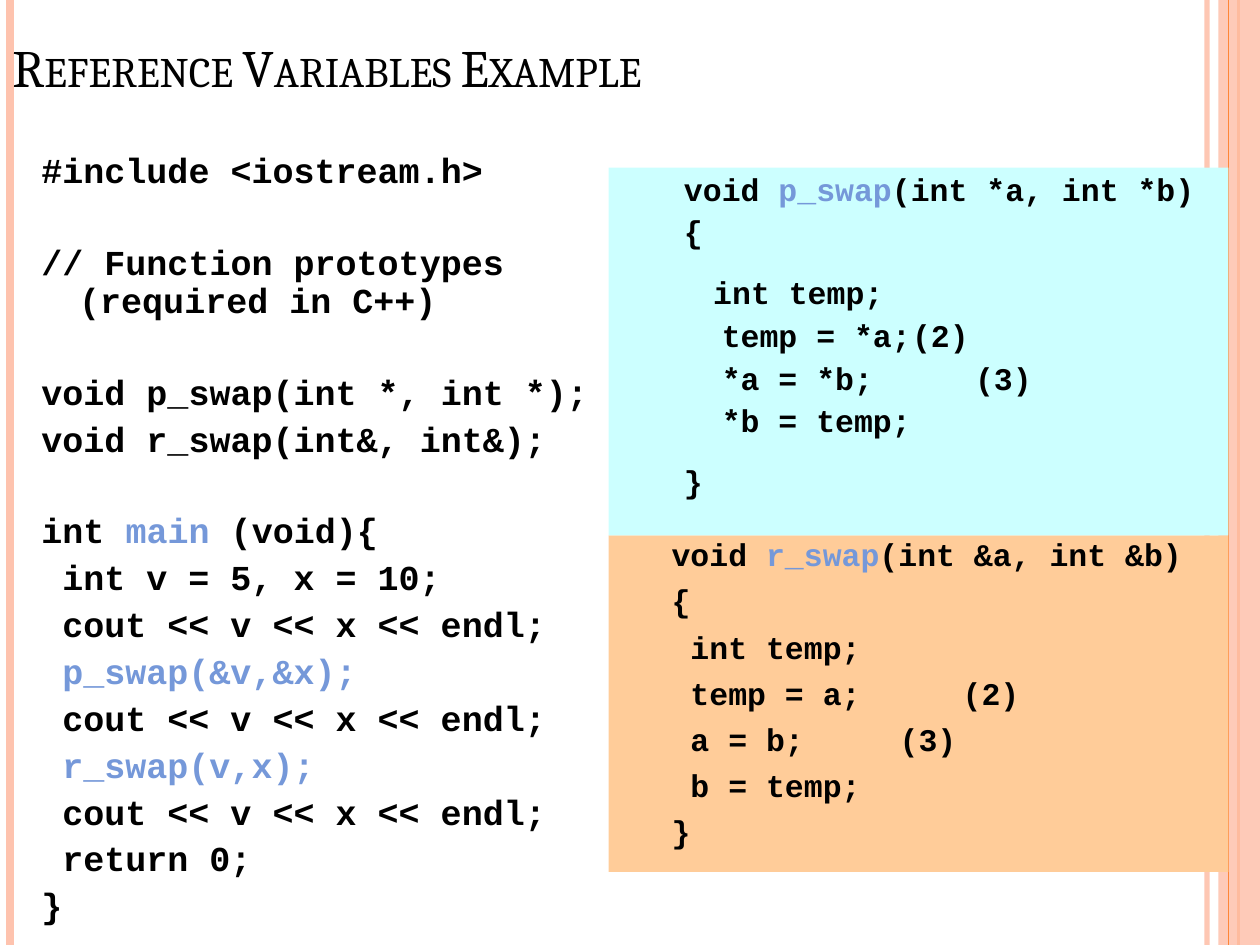
from pptx import Presentation
from pptx.util import Inches, Pt
from pptx.dml.color import RGBColor
from pptx.enum.shapes import MSO_SHAPE, MSO_CONNECTOR
from pptx.enum.text import MSO_ANCHOR, PP_ALIGN
from pptx.oxml.ns import qn
from lxml.etree import SubElement

MAIN = [
    ("#include <iostream.h>", 0, 5.2),
    ("// Function prototypes (required in C++)", 0, 30.8),
    ("void p_swap(int *, int *);", 0, 30.8),
    ("void r_swap(int&, int&);", 0, 5.2),
    ("int |main| (void){", 0, 30.8),
    ("int v = 5, x = 10;", 1, 5.2),
    ("cout << v << x << endl;", 1, 5.2),
    ("|p_swap(&v,&x);", 1, 5.2),
    ("cout << v << x << endl;", 1, 5.2),
    ("|r_swap(v,x);", 1, 5.2),
    ("cout << v << x << endl;", 1, 5.2),
    ("return 0;", 1, 5.2),
    ("}", 0, 5.2),
]
REFS = [
    ("void |r_swap|(int &a, int &b)", 0, 4.7),
    ("{", 0, 4.7),
    ("int temp;", 1, 4.7),
    ("temp = a;\t\t(2)", 1, 4.7),
    ("a = b;\t\t(3)", 1, 4.7),
    ("b = temp;", 1, 4.7),
    ("}", 0, 4.7),
]
PTRS = [
    ("void |p_swap|(int *a, int *b)", 0, 5),
    ("{", 0, 5),
    ("int temp;", 1.55, 15.3),
    ("temp = *a;\t(2)", 2, 5),
    ("*a = *b;\t\t(3)", 2, 5),
    ("*b = temp;", 2, 5),
    ("}", 0, 15.3),
]


def color(code):
    return RGBColor.from_string(code)


def fade(fill, share):
    tint = fill.find(".//" + qn("a:srgbClr"))
    SubElement(tint, qn("a:alpha")).set("val", str(share * 1000))


def write(para, text, size=20, font="Courier New", bold=True, tint="000000", caps=False):
    run = para.add_run()
    run.text = text
    run.font.size = Pt(size)
    run.font.name = font
    run.font.bold = bold
    run.font.color.rgb = color(tint)
    if caps:
        run.font._element.set("cap", "small")


def rule(slide, x, tint, width, share=100):
    line = slide.shapes.add_connector(
        MSO_CONNECTOR.STRAIGHT, Inches(x), 0, Inches(x), Inches(7.5))
    line.line.color.rgb = color(tint)
    line.line.width = Pt(width)
    props = line._element.spPr
    if share < 100:
        fade(props.find(qn("a:ln")), share)
    SubElement(props, qn("a:effectLst"))


def panel(slide, box, tint):
    shape = slide.shapes.add_shape(MSO_SHAPE.RECTANGLE, *map(Inches, box))
    shape.shadow.inherit = False
    shape.fill.solid()
    shape.fill.fore_color.rgb = color(tint)
    shape.line.fill.background()
    return shape


def edges(slide):
    rule(slide, 9.58, "FEC3AE", 3, 93)
    rule(slide, 0.08, "FEC3AE", 4.5)
    rule(slide, 9.83, "FE8637", 1.5)
    band = panel(slide, (9.67, 0, 0.33, 7.5), "FEC3AE")
    fade(band._element.spPr, 87)
    rule(slide, 9.75, "FE8637", 0.75)


def title(slide, box):
    frame = slide.shapes.add_textbox(*map(Inches, box)).text_frame
    frame.word_wrap = True
    frame.vertical_anchor = MSO_ANCHOR.BOTTOM
    write(frame.paragraphs[0], "Reference Variables Example",
          size=30, font="Cambria", bold=False, caps=True)


def code(slide, box, lines, size, left, hang, space=1, fill=None, pad=None):
    if fill:
        shape = panel(slide, box, fill)
    else:
        shape = slide.shapes.add_textbox(*map(Inches, box))
    frame = shape.text_frame
    frame.word_wrap = True
    frame.vertical_anchor = MSO_ANCHOR.TOP
    if pad is not None:
        frame.margin_left = frame.margin_right = Inches(pad)
        frame.margin_top = frame.margin_bottom = Inches(pad)
    char = size * 0.6 / 72
    for i, (text, step, gap) in enumerate(lines):
        para = frame.add_paragraph() if i else frame.paragraphs[0]
        para.alignment = PP_ALIGN.LEFT
        para.line_spacing = space
        para.space_before = Pt(gap)
        props = para._p.get_or_add_pPr()
        props.set("marL", str(Inches(left)))
        props.set("indent", str(Inches(step * char - hang)))
        for j, part in enumerate(text.split("|")):
            if part:
                write(para, part, size=size, tint="7598D9" if j % 2 else "000000")


def main():
    deck = Presentation()
    deck.slide_width = Inches(10)
    deck.slide_height = Inches(7.5)
    slide = deck.slides.add_slide(deck.slide_layouts[6])
    edges(slide)
    title(slide, (0, 0.08, 10, 0.75))
    code(slide, (-0.17, 1.17, 5.08, 6.25), MAIN, 20, 0.7, 0.3, space=0.9)
    code(slide, (4.83, 4.25, 4.92, 2.67), REFS, 18, 0.81, 0.31, fill="FFCC99", pad=0)
    code(slide, (4.83, 1.33, 4.92, 2.92), PTRS, 18, 0.81, 0.31, space=0.9, fill="CCFFFF")
    deck.save("out.pptx")


if __name__ == "__main__":
    main()
